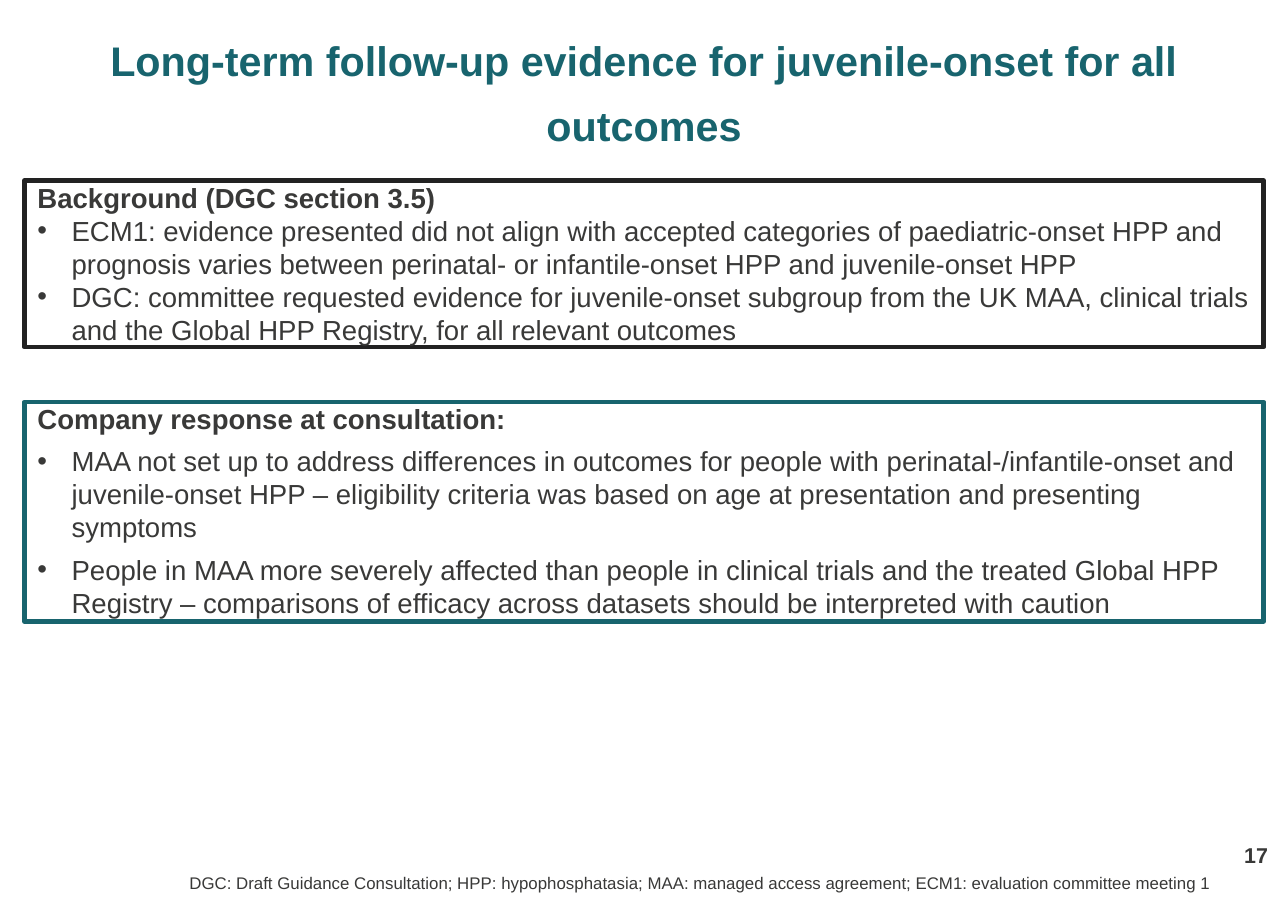
from lxml import etree
from pptx import Presentation
from pptx import util as u
from pptx.dml.color import RGBColor
from pptx.enum import shapes, text as t
from pptx.oxml.ns import qn

PX = 9144  # 100 px to the inch
FONT = "Arial"
COLOURS = {"teal": "18646E", "text": "393938", "black": "222222", "white": "FFFFFF"}
BOX_LEFT, BOX_WIDTH = 22, 1125
HEADING_INDENT, BULLET_INDENT, BULLET_HANG = 12, 43, 31


def px(length):
    return u.Emu(length * PX)


def colour(name):
    return RGBColor.from_string(COLOURS[name])


def place(shape, left, top, width, height):
    shape.left, shape.top, shape.width, shape.height = map(px, (left, top, width, height))


def set_frame(frame, anchor=t.MSO_ANCHOR.TOP, margin=0):
    frame.word_wrap = True
    frame.auto_size = t.MSO_AUTO_SIZE.NONE
    frame.vertical_anchor = anchor
    frame.margin_left = frame.margin_right = px(margin)
    frame.margin_top = frame.margin_bottom = 0


def write(paragraph, words, size=18, bold=False, fill="text",
          align=t.PP_ALIGN.LEFT, before=0, line_spacing=None):
    paragraph.alignment = align
    paragraph.space_before = u.Pt(before)
    if line_spacing:
        paragraph.line_spacing = u.Pt(line_spacing)
    run = paragraph.add_run()
    run.text = words
    run.font.name, run.font.size, run.font.bold = FONT, u.Pt(size), bold
    run.font.color.rgb = colour(fill)


def set_indent(paragraph, left, hang=0, bullet=None):
    properties = paragraph._p.get_or_add_pPr()
    properties.set("marL", str(px(left)))
    properties.set("indent", str(px(-hang)))
    mark = etree.SubElement(properties, qn("a:buChar" if bullet else "a:buNone"))
    if bullet:
        mark.set("char", bullet)


def fill_list_box(box, top, height, outline, heading, bullets, gap=0):
    place(box, BOX_LEFT, top, BOX_WIDTH, height)
    box.line.color.rgb = colour(outline)
    box.line.width = u.Pt(3)
    frame = box.text_frame
    set_frame(frame)
    set_indent(frame.paragraphs[0], HEADING_INDENT)
    write(frame.paragraphs[0], heading, bold=True)
    for bullet in bullets:
        paragraph = frame.add_paragraph()
        set_indent(paragraph, BULLET_INDENT, BULLET_HANG, "•")
        write(paragraph, bullet, before=gap)


def add_footnote(slide, words):
    footnote = slide.shapes.add_shape(shapes.MSO_SHAPE.RECTANGLE,
                                      px(162), px(787), px(962), px(29))
    footnote.shadow.inherit = False
    footnote.fill.solid()
    footnote.fill.fore_color.rgb = colour("white")
    footnote.line.fill.background()
    set_frame(footnote.text_frame, t.MSO_ANCHOR.MIDDLE, margin=10)
    write(footnote.text_frame.paragraphs[0], words, size=11)


def add_page_number(slide, number):
    box = slide.shapes.add_textbox(px(1096), px(752), px(55), px(36))
    set_frame(box.text_frame, t.MSO_ANCHOR.BOTTOM)
    write(box.text_frame.paragraphs[0], number, size=14, bold=True, align=t.PP_ALIGN.RIGHT)


def main():
    presentation = Presentation()
    presentation.slide_width, presentation.slide_height = px(1169), px(827)
    slide = presentation.slides.add_slide(presentation.slide_layouts[3])
    title, background, response = slide.placeholders

    # Title
    place(title, 60, 19, 1049, 120)
    set_frame(title.text_frame)
    write(title.text_frame.paragraphs[0],
          "Long-term follow-up evidence for juvenile-onset for all outcomes",
          size=27, bold=True, fill="teal", align=t.PP_ALIGN.CENTER, line_spacing=42)

    # Page number and abbreviations
    add_page_number(slide, "17")
    add_footnote(slide, "DGC: Draft Guidance Consultation; HPP: hypophosphatasia; "
                 "MAA: managed access agreement; ECM1: evaluation committee meeting 1")

    # Outlined lists
    fill_list_box(background, 164, 151, "black", "Background (DGC section 3.5)", [
        "ECM1: evidence presented did not align with accepted categories of "
        "paediatric-onset HPP and prognosis varies between perinatal- or "
        "infantile-onset HPP and juvenile-onset HPP",
        "DGC: committee requested evidence for juvenile-onset subgroup from the UK MAA, "
        "clinical trials and the Global HPP Registry, for all relevant outcomes",
    ])
    fill_list_box(response, 365, 199, "teal", "Company response at consultation:", [
        "MAA not set up to address differences in outcomes for people with "
        "perinatal-/infantile-onset and juvenile-onset HPP – eligibility criteria was "
        "based on age at presentation and presenting symptoms",
        "People in MAA more severely affected than people in clinical trials and the "
        "treated Global HPP Registry – comparisons of efficacy across datasets should be "
        "interpreted with caution",
    ], gap=6)

    presentation.save("out.pptx")


if __name__ == "__main__":
    main()
